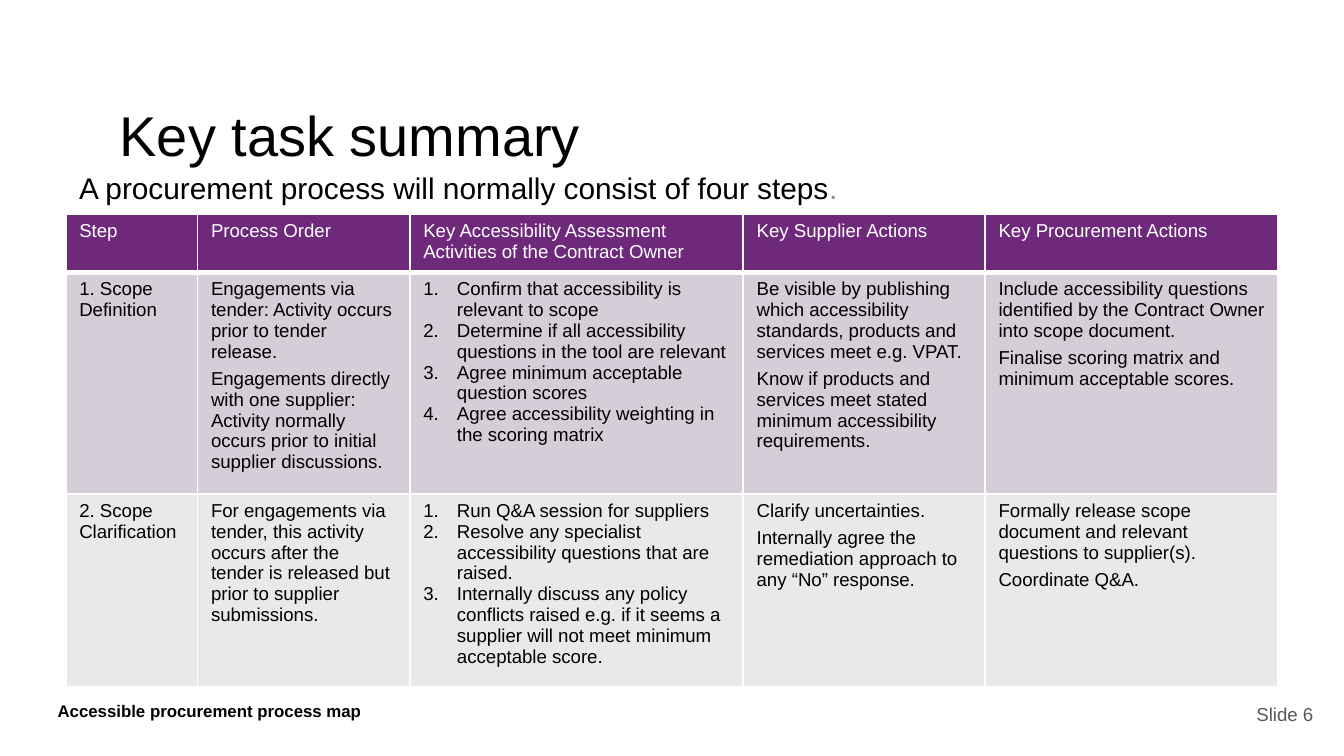
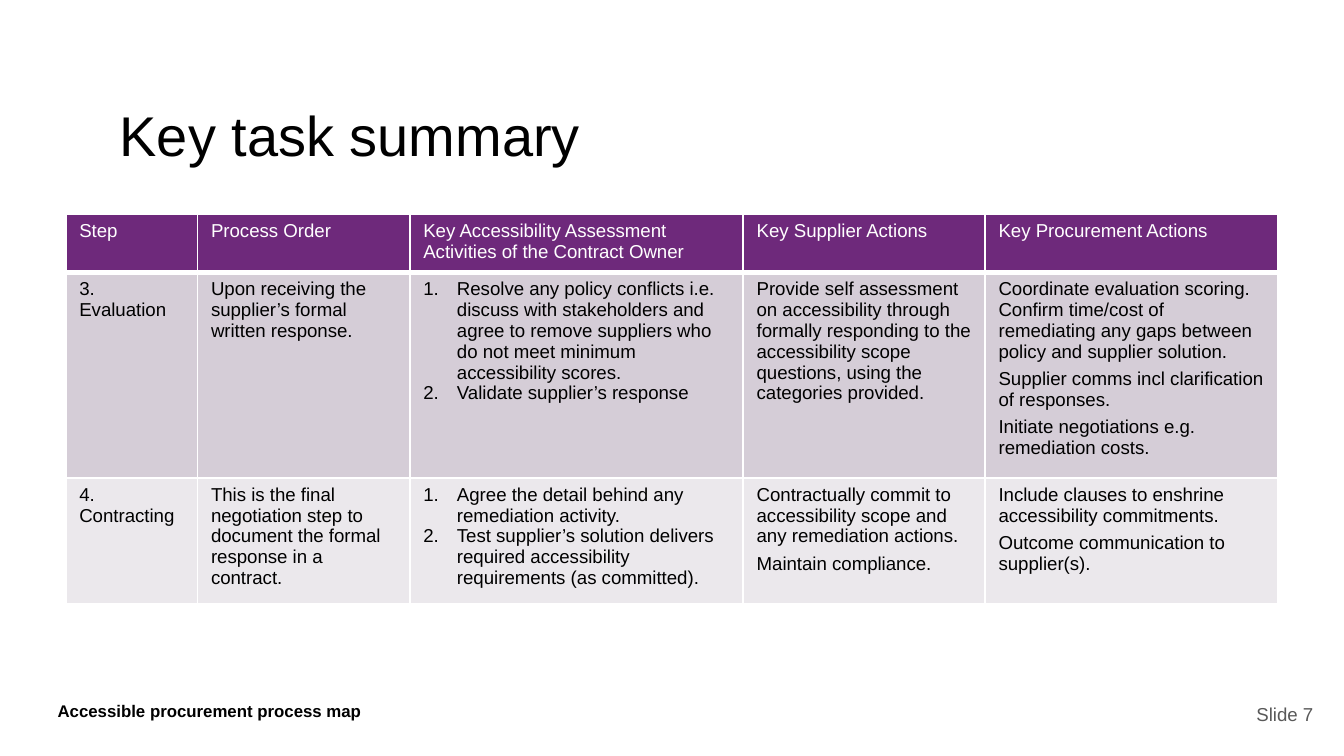
from lxml.etree import SubElement
from pptx import Presentation
from pptx.dml.color import RGBColor
from pptx.enum.text import MSO_ANCHOR, MSO_AUTO_SIZE, PP_ALIGN
from pptx.oxml.ns import qn
from pptx.util import Pt

TITLE = "Key task summary"
FOOTER = "Accessible procurement process map"
HEADINGS = [
    "Step",
    "Process Order",
    "Key Accessibility Assessment Activities of the Contract Owner",
    "Key Supplier Actions",
    "Key Procurement Actions",
]
# In each cell, list items are set apart by a small gap; "\n" starts a paragraph without one.
PAGES = [
    {
        "number": "Slide 6",
        "subtitle": [("A procurement process will normally consist of four steps", "000000"),
                     (".", "8C8C8C")],
        "table_height": 704,
        "row_heights": [72, 276, 240],
        "steps": [
            [
                ["1. Scope Definition"],
                ["Engagements via tender: Activity occurs prior to tender release.",
                 "Engagements directly with one supplier: Activity normally occurs prior to "
                 "initial supplier discussions."],
                ["Confirm that accessibility is relevant to scope",
                 "Determine if all accessibility questions in the tool are relevant",
                 "Agree minimum acceptable question scores",
                 "Agree accessibility weighting in the scoring matrix"],
                ["Be visible by publishing which accessibility standards, products and "
                 "services meet e.g. VPAT.",
                 "Know if products and services meet stated minimum accessibility requirements."],
                ["Include accessibility questions identified by the Contract Owner into "
                 "scope document.",
                 "Finalise scoring matrix and minimum acceptable scores."],
            ],
            [
                ["2. Scope Clarification"],
                ["For engagements via tender, this activity occurs after the tender is "
                 "released but prior to supplier submissions."],
                ["Run Q&A session for suppliers",
                 "Resolve any specialist accessibility questions that are raised.",
                 "Internally discuss any policy conflicts raised e.g. if it seems a supplier "
                 "will not meet minimum acceptable score."],
                ["Clarify uncertainties.",
                 "Internally agree the remediation approach to any “No” response."],
                ["Formally release scope document and relevant questions to supplier(s).",
                 "Coordinate Q&A."],
            ],
        ],
    },
    {
        "number": "Slide 7",
        "subtitle": [],
        "table_height": 580,
        "row_heights": [72, 256, 156],
        "steps": [
            [
                ["3. Evaluation"],
                ["Upon receiving the supplier’s formal written response."],
                ["Resolve any policy conflicts i.e. discuss with stakeholders and agree to "
                 "remove suppliers who do not meet minimum accessibility scores.",
                 "Validate supplier’s response"],
                ["Provide self assessment on accessibility through formally responding to "
                 "the accessibility scope questions, using the categories provided."],
                ["Coordinate evaluation scoring.\nConfirm time/cost of remediating any gaps "
                 "between policy and supplier solution.",
                 "Supplier comms incl clarification of responses.",
                 "Initiate negotiations e.g. remediation costs."],
            ],
            [
                ["4. Contracting"],
                ["This is the final negotiation step to document the formal response in a "
                 "contract."],
                ["Agree the detail behind any remediation activity.",
                 "Test supplier’s solution delivers required accessibility requirements "
                 "(as committed)."],
                ["Contractually commit to accessibility scope and any remediation actions.",
                 "Maintain compliance."],
                ["Include clauses to enshrine accessibility commitments.",
                 "Outcome communication to supplier(s)."],
            ],
        ],
    },
]

FONT = "Arial"
BLACK, WHITE, GREY, PURPLE = "000000", "FFFFFF", "595959", "6E297B"
BANDS = ["D5CDD7", "EBE8EC"]
COLUMNS = [196, 316, 496, 360, 436]
NUMBERED_COLUMN = 2
INDENT = 50
GAP = 3.4
TABLE_LEFT, TABLE_TOP = 98, 318


def px(length):
    """Turn px, 200 to the inch, into EMU."""
    return length * 4572


def color(value):
    return RGBColor.from_string(value)


def add_span(para, text, size, ink, bold):
    span = para.add_run()
    span.text = text
    span.font.name = FONT
    span.font.size = Pt(size)
    span.font.bold = bold
    span.font.color.rgb = color(ink)


def number_paragraph(para):
    properties = para._p.get_or_add_pPr()
    properties.set("marL", str(px(INDENT)))
    properties.set("indent", str(-px(INDENT)))
    SubElement(properties, qn("a:buFont"), typeface=FONT)
    SubElement(properties, qn("a:buAutoNum"), type="arabicPeriod")


def write(frame, items, size=10, ink=BLACK, bold=False, align=PP_ALIGN.LEFT,
          gap=0, numbered=False):
    """Write items, each a text or a list of (text, colour) spans."""
    para = frame.paragraphs[0]
    for index, item in enumerate(items):
        lines = item.split("\n") if isinstance(item, str) else [item]
        for line_index, line in enumerate(lines):
            if index or line_index:
                para = frame.add_paragraph()
            if numbered:
                number_paragraph(para)
            para.alignment = align
            para.space_before = Pt(gap if index and not line_index else 0)
            spans = [(line, ink)] if isinstance(line, str) else line
            for text, span_ink in spans:
                add_span(para, text, size, span_ink, bold)


def set_frame(frame, inset_x=20, inset_y=20, anchor=MSO_ANCHOR.TOP, fit=MSO_AUTO_SIZE.NONE):
    frame.word_wrap = True
    frame.auto_size = fit
    frame.vertical_anchor = anchor
    frame.margin_left = frame.margin_right = px(inset_x)
    frame.margin_top = frame.margin_bottom = px(inset_y)


def add_text(page, place, items, frame_format, **text_format):
    box = page.shapes.add_textbox(*map(px, place))
    set_frame(box.text_frame, **frame_format)
    write(box.text_frame, items, **text_format)


def set_borders(cell, widths):
    properties = cell._tc.get_or_add_tcPr()
    for side, width in widths.items():
        line = SubElement(properties, qn(f"a:ln{side}"), w=str(Pt(width)))
        fill = SubElement(line, qn("a:solidFill"))
        SubElement(fill, qn("a:srgbClr"), val=WHITE)


def add_table(page, table_height, row_heights, steps):
    rows = [[[heading] for heading in HEADINGS]] + steps
    holder = page.shapes.add_table(
        len(rows), len(COLUMNS), px(TABLE_LEFT), px(TABLE_TOP),
        px(sum(COLUMNS)), px(table_height))
    table = holder.table
    for column, width in zip(table.columns, COLUMNS):
        column.width = px(width)
    for row_index, (height, row) in enumerate(zip(row_heights, rows)):
        table.rows[row_index].height = px(height)
        header = row_index == 0
        for column_index, items in enumerate(row):
            cell = table.cell(row_index, column_index)
            set_borders(cell, {"L": 1, "R": 1, "T": 1, "B": 3 if header else 1})
            cell.fill.solid()
            cell.fill.fore_color.rgb = color(PURPLE if header else BANDS[row_index - 1])
            numbered = not header and column_index == NUMBERED_COLUMN
            write(cell.text_frame, items, ink=WHITE if header else BLACK,
                  gap=0 if numbered else GAP, numbered=numbered)
    holder.height = px(table_height)


def add_page(deck, content):
    page = deck.slides.add_slide(deck.slide_layouts[5])
    add_text(page, (66, 1028, 844, 70), [FOOTER],
             {"fit": MSO_AUTO_SIZE.SHAPE_TO_FIT_TEXT}, size=9, bold=True)
    title = page.shapes.title
    title.left, title.top, title.width, title.height = map(px, (158, 130, 1864, 126))
    set_frame(title.text_frame)
    write(title.text_frame, [TITLE], size=30)
    add_text(page, (1688, 1020, 286, 86), [content["number"]],
             {"anchor": MSO_ANCHOR.MIDDLE}, ink=GREY, align=PP_ALIGN.RIGHT)
    add_table(page, content["table_height"], content["row_heights"], content["steps"])
    if content["subtitle"]:
        add_text(page, (98, 242, 1400, 76), [content["subtitle"]], {"inset_y": 10}, size=16)


def main():
    deck = Presentation()
    deck.slide_width, deck.slide_height = px(2000), px(1125)
    for content in PAGES:
        add_page(deck, content)
    deck.save("out.pptx")


if __name__ == "__main__":
    main()
